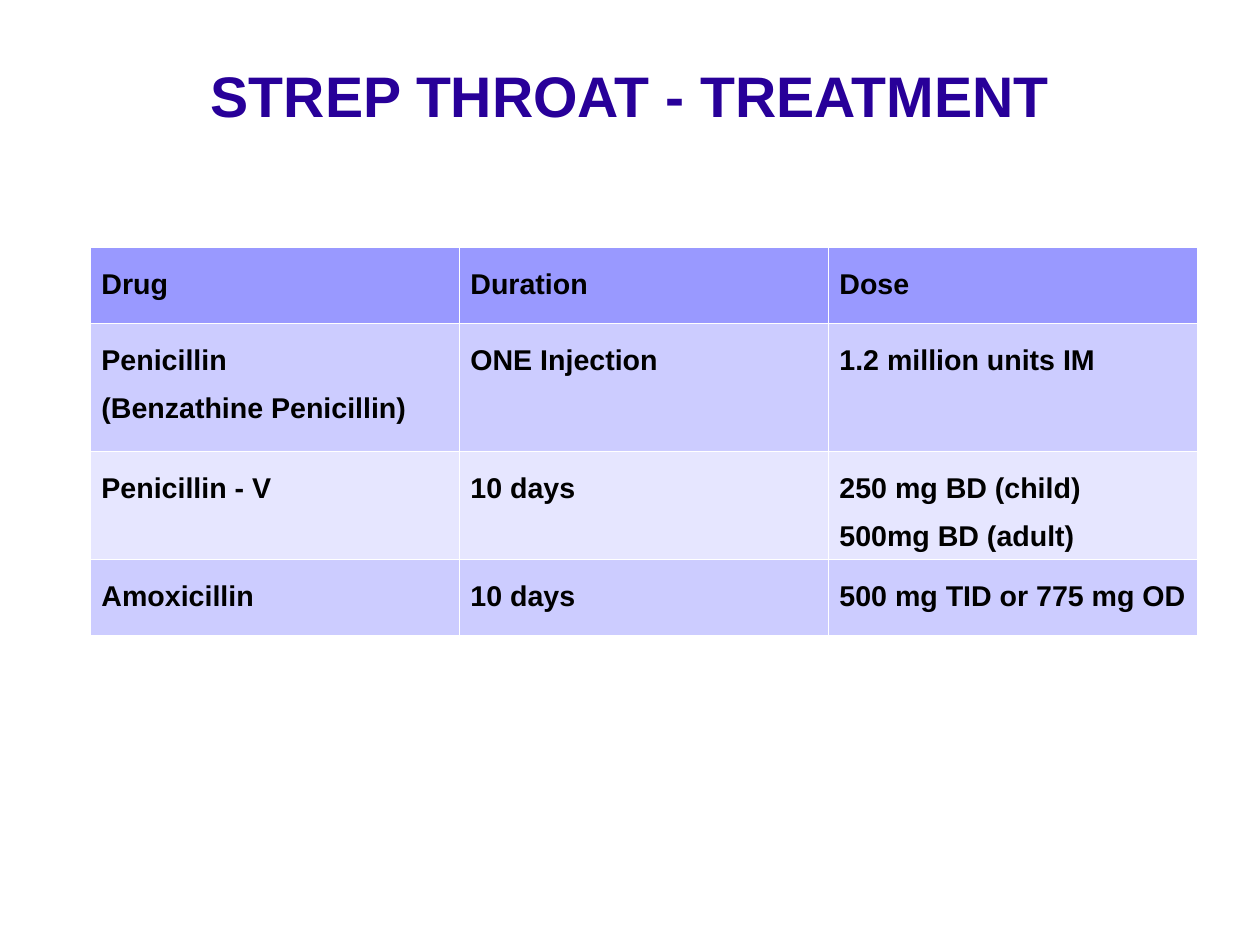
import dataclasses

import lxml.etree
import pptx
import pptx.dml.color
import pptx.enum.text
import pptx.oxml.ns
import pptx.util


@dataclasses.dataclass(frozen=True)
class Theme:
    font: str = "Arial"
    title_size: int = 36
    cell_size: int = 18
    title_color: str = "280099"
    text_color: str = "000000"
    header_fill: str = "9999FF"
    band_fills: tuple = ("CCCCFF", "E6E6FF")
    border_color: str = "FFFFFF"
    border_width: float = 0.11
    line_spacing: float = 1.5


def px(value):
    return pptx.util.Emu(value * 8000)


def rgb(color):
    return pptx.dml.color.RGBColor.from_string(color)


class SlideBuilder:
    def __init__(self, slide, theme):
        self.slide = slide
        self.theme = theme

    def style_font(self, paragraph, size, color):
        for run in paragraph.runs:
            run.font.name = self.theme.font
            run.font.size = pptx.util.Pt(size)
            run.font.bold = True
            run.font.color.rgb = rgb(color)

    def title(self, text, left, top, width, height):
        shape = self.slide.shapes.title
        shape.left, shape.top = px(left), px(top)
        shape.width, shape.height = px(width), px(height)
        frame = shape.text_frame
        frame.text = text
        frame.word_wrap = True
        frame.auto_size = pptx.enum.text.MSO_AUTO_SIZE.NONE
        frame.vertical_anchor = pptx.enum.text.MSO_ANCHOR.MIDDLE
        frame.margin_left = frame.margin_right = 0
        frame.margin_top = frame.margin_bottom = 0
        paragraph = frame.paragraphs[0]
        paragraph.alignment = pptx.enum.text.PP_ALIGN.CENTER
        self.style_font(paragraph, self.theme.title_size, self.theme.title_color)

    def borders(self, cell):
        properties = cell._tc.get_or_add_tcPr()
        qn = pptx.oxml.ns.qn
        width = str(int(pptx.util.Pt(self.theme.border_width)))
        # Border lines come before the fill in the cell properties
        for position, side in enumerate(("a:lnL", "a:lnR", "a:lnT", "a:lnB")):
            line = lxml.etree.Element(qn(side), w=width)
            fill = lxml.etree.SubElement(line, qn("a:solidFill"))
            lxml.etree.SubElement(fill, qn("a:srgbClr"), val=self.theme.border_color)
            properties.insert(position, line)

    def cell(self, cell, text, fill):
        cell.fill.solid()
        cell.fill.fore_color.rgb = rgb(fill)
        self.borders(cell)
        cell.text_frame.text = text
        for paragraph in cell.text_frame.paragraphs:
            paragraph.line_spacing = self.theme.line_spacing
            self.style_font(paragraph, self.theme.cell_size, self.theme.text_color)

    def table(self, rows, left, top, column_width, row_heights):
        columns = len(rows[0])
        table = self.slide.shapes.add_table(
            len(rows), columns, px(left), px(top),
            px(column_width * columns), px(sum(row_heights))).table
        table.horz_banding = False
        for column in table.columns:
            column.width = px(column_width)
        for index, texts in enumerate(rows):
            table.rows[index].height = px(row_heights[index])
            fill = self.theme.band_fills[(index - 1) % 2] if index else self.theme.header_fill
            for column, text in enumerate(texts):
                self.cell(table.cell(index, column), text, fill)


TREATMENTS = [
    ("Drug", "Duration", "Dose"),
    ("Penicillin\n(Benzathine Penicillin)", "ONE Injection", "1.2 million units IM"),
    ("Penicillin - V", "10 days", "250 mg BD (child)\n500mg BD (adult)"),
    ("Amoxicillin", "10 days", "500 mg TID or 775 mg OD"),
]


def main():
    presentation = pptx.Presentation()
    presentation.slide_width, presentation.slide_height = px(1260), px(945)
    slide = presentation.slides.add_slide(presentation.slide_layouts[5])
    builder = SlideBuilder(slide, Theme())

    # Heading
    builder.title("STREP THROAT - TREATMENT", 63, 38, 1134, 113)

    # Drug, duration and dose
    builder.table(TREATMENTS, 90, 247, 369, [76, 128, 108, 76])

    presentation.save("out.pptx")


if __name__ == "__main__":
    main()
